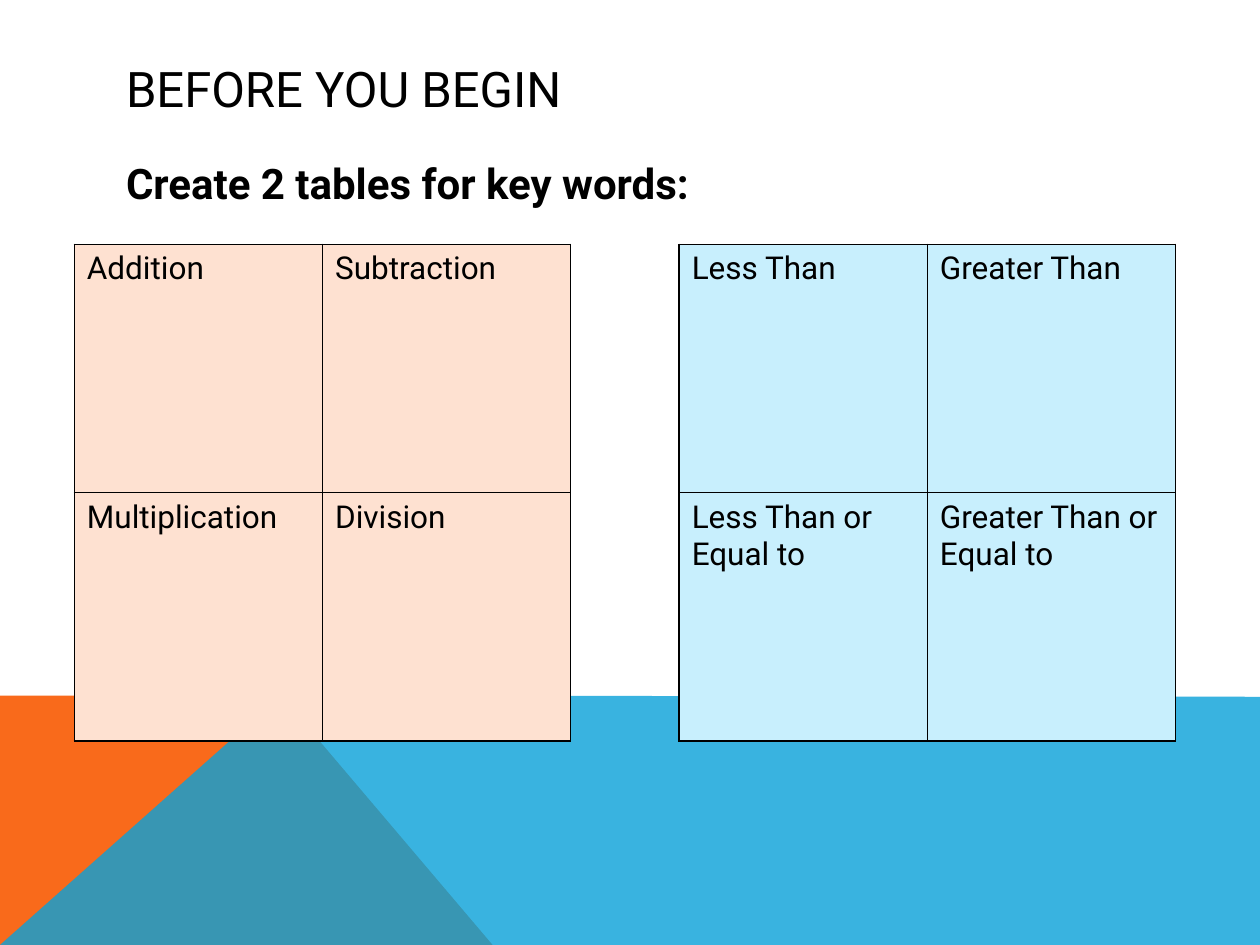
import pptx
import pptx.dml.color
import pptx.enum.text
import pptx.oxml.ns
import pptx.util
from lxml import etree

Inches = pptx.util.Inches
Pt = pptx.util.Pt
qn = pptx.oxml.ns.qn

FONT = "Roboto"
COLORS = {
    "text": "000000",
    "orange": "F96A1B",
    "blue": "08A1D9",
    "peach": "FEE1D1",
    "sky": "C8EFFD",
}
HEADING = "BEFORE YOU BEGIN"
INSTRUCTION = "Create 2 tables for key words:"
KEY_WORD_TABLES = [
    (0.59, "peach", [["Addition", "Subtraction"],
                     ["Multiplication", "Division"]]),
    (5.39, "sky", [["Less Than", "Greater Than"],
                   ["Less Than or Equal to", "Greater Than or Equal to"]]),
]
TABLE_TOP, CELL_SIZE = 1.94, 1.97
BANDS = [
    ("orange", 100, [(0, 7.5), (0, 5.52), (2.23, 5.52), (3.91, 7.5)]),
    ("blue", 80, [(0, 7.5), (2.23, 5.52), (10, 5.53), (10, 7.5)]),
]


def rgb(name):
    return pptx.dml.color.RGBColor.from_string(COLORS[name])


def style_text(frame, size, bold=False):
    for paragraph in frame.paragraphs:
        paragraph.alignment = pptx.enum.text.PP_ALIGN.LEFT
        for run in paragraph.runs:
            run.font.name = FONT
            run.font.size = Pt(size)
            run.font.bold = bold
            run.font.color.rgb = rgb("text")


def add_band(slide, depth, color, opacity, points):
    corners = [(Inches(x), Inches(y)) for x, y in points]
    builder = slide.shapes.build_freeform(*corners[0])
    builder.add_line_segments(corners[1:], close=True)
    band = builder.convert_to_shape()
    band.shadow.inherit = False
    band.line.fill.background()
    band.fill.solid()
    band.fill.fore_color.rgb = rgb(color)
    if opacity < 100:
        fill_color = next(band.element.spPr.iter(qn("a:srgbClr")))
        etree.SubElement(fill_color, qn("a:alpha"), val=str(opacity * 1000))
    band.element.getparent().insert(2 + depth, band.element)


def fill_placeholder(placeholder, text, top, height, size, anchor, bold=False):
    placeholder.left, placeholder.top = Inches(0.9), Inches(top)
    placeholder.width, placeholder.height = Inches(8.22), Inches(height)
    frame = placeholder.text_frame
    frame.text = text
    frame.word_wrap = True
    frame.auto_size = pptx.enum.text.MSO_AUTO_SIZE.NONE
    frame.vertical_anchor = anchor
    style_text(frame, size, bold)
    return frame.paragraphs[0]


def add_borders(cell):
    properties = cell._tc.get_or_add_tcPr()
    for position, side in enumerate(("lnL", "lnR", "lnT", "lnB")):
        border = etree.Element(qn(f"a:{side}"), w=str(Pt(1)))
        solid = etree.SubElement(border, qn("a:solidFill"))
        etree.SubElement(solid, qn("a:srgbClr"), val=COLORS["text"])
        properties.insert(position, border)


def add_key_word_table(slide, left, color, rows):
    row_count, column_count = len(rows), len(rows[0])
    table = slide.shapes.add_table(
        row_count, column_count, Inches(left), Inches(TABLE_TOP),
        Inches(CELL_SIZE * column_count), Inches(CELL_SIZE * row_count)).table
    table.first_row = table.horz_banding = False
    for r, row in enumerate(rows):
        for c, key_word in enumerate(row):
            cell = table.cell(r, c)
            cell.text_frame.text = key_word
            style_text(cell.text_frame, 18)
            cell.fill.solid()
            cell.fill.fore_color.rgb = rgb(color)
            add_borders(cell)


def main():
    """Build the slide with two key word tables."""
    presentation = pptx.Presentation()
    presentation.slide_width = Inches(10)
    presentation.slide_height = Inches(7.5)
    slide = presentation.slides.add_slide(presentation.slide_layouts[1])
    for depth, band in enumerate(BANDS):
        add_band(slide, depth, *band)

    anchors = pptx.enum.text.MSO_ANCHOR
    fill_placeholder(slide.shapes.title, HEADING, 0.4, 0.6, 28, anchors.MIDDLE)
    instruction = fill_placeholder(
        slide.placeholders[1], INSTRUCTION, 1.2, 3.91, 24, anchors.TOP, bold=True)
    instruction.space_before = Pt(8)
    properties = instruction._p.get_or_add_pPr()
    properties.set("marL", str(Inches(0.38)))
    properties.set("indent", str(Inches(-0.38)))
    etree.SubElement(properties, qn("a:buNone"))

    for key_word_table in KEY_WORD_TABLES:
        add_key_word_table(slide, *key_word_table)
    presentation.save("out.pptx")


if __name__ == "__main__":
    main()
